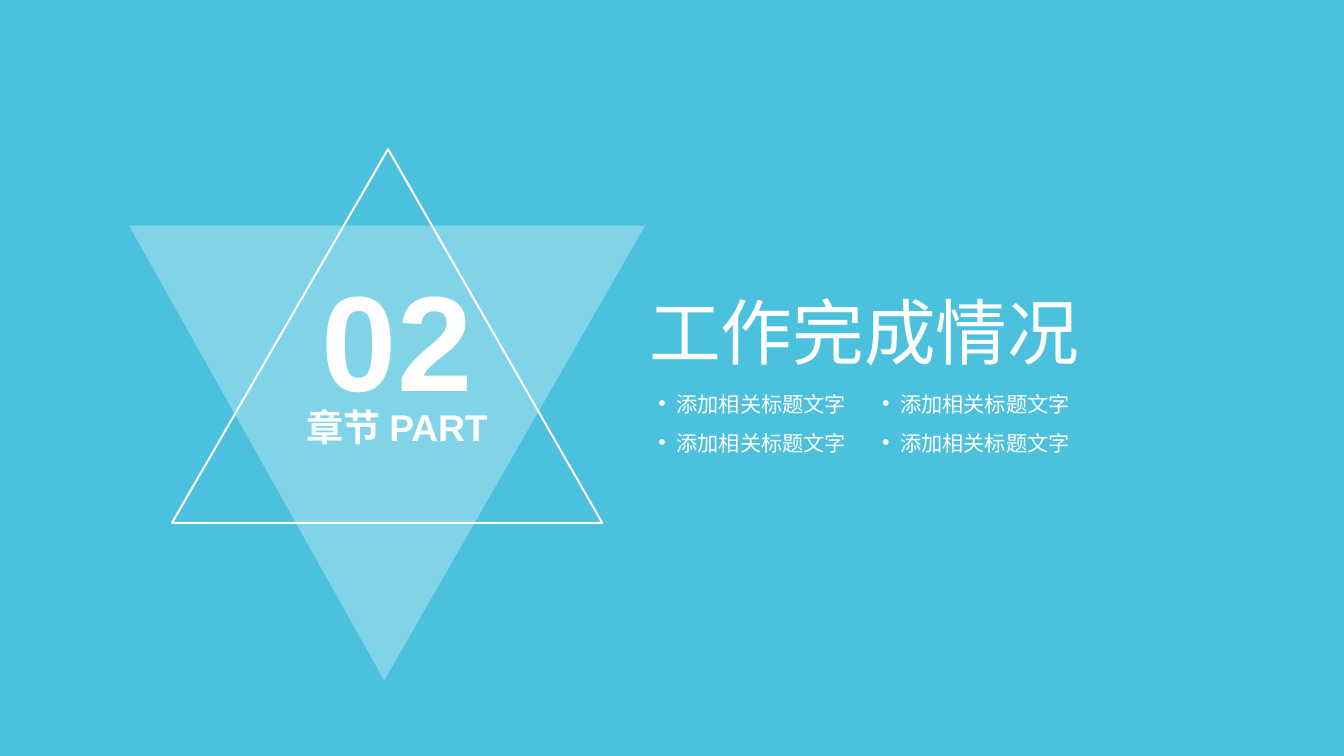
from dataclasses import dataclass
from itertools import product

from lxml.etree import SubElement
from pptx import Presentation
from pptx.dml.color import RGBColor
from pptx.enum.shapes import MSO_SHAPE
from pptx.enum.text import MSO_AUTO_SIZE, PP_ALIGN
from pptx.oxml.ns import qn
from pptx.util import Inches, Pt

WIDTH, HEIGHT = 14.06, 7.91
BLUE, WHITE = "4BC1DD", "FFFFFF"
FONT = "Arial"


@dataclass
class Triangle:
    corners: list[tuple[float, float]]
    opacity: int = 0  # percent of white fill, 0 for outline only
    line_width: float = 0


@dataclass
class Label:
    text: str
    left: float
    top: float
    width: float
    height: float
    size: int
    bold: bool = False
    align: PP_ALIGN = PP_ALIGN.LEFT
    bullet: bool = False


TRIANGLES = [
    Triangle([(1.35, 2.36), (6.75, 2.36), (4.02, 7.12)], opacity=30),
    Triangle([(4.06, 1.56), (6.3, 5.47), (1.8, 5.47)], line_width=1.5),
]

LABELS = [
    Label("02", 3.23, 2.68, 1.85, 1.72, 102, bold=True, align=PP_ALIGN.CENTER),
    Label("章节 PART", 2.26, 4.23, 3.79, 0.47, 28, bold=True, align=PP_ALIGN.CENTER),
    Label("工作完成情况", 6.79, 3.01, 4.89, 0.91, 54),
]

# Bullet grid: two rows by two columns
BULLETS = [
    Label("添加相关标题文字", left, top, 2.19, 0.37, 16, bullet=True)
    for top, left in product((4.04, 4.45), (6.79, 9.13))
]


def color(value: str) -> RGBColor:
    return RGBColor.from_string(value)


def set_attributes(target, values: dict) -> None:
    for name, value in values.items():
        setattr(target, name, value)


def add_background(slide) -> None:
    shape = slide.shapes.add_shape(
        MSO_SHAPE.RECTANGLE, 0, 0, Inches(WIDTH), Inches(HEIGHT))
    shape.shadow.inherit = False
    shape.fill.solid()
    shape.fill.fore_color.rgb = color(BLUE)
    shape.line.fill.background()


def add_triangle(slide, triangle: Triangle) -> None:
    points = [(Inches(x), Inches(y)) for x, y in triangle.corners]
    builder = slide.shapes.build_freeform(*points[0])
    builder.add_line_segments(points[1:], close=True)
    shape = builder.convert_to_shape()
    shape.shadow.inherit = False

    if triangle.opacity:
        shape.fill.solid()
        shape.fill.fore_color.rgb = color(WHITE)
        fill_color = shape.fill._xPr.find(qn("a:solidFill"))[0]
        SubElement(fill_color, qn("a:alpha"), val=str(triangle.opacity * 1000))
    else:
        shape.fill.background()

    if triangle.line_width:
        shape.line.color.rgb = color(WHITE)
        shape.line.width = Pt(triangle.line_width)
    else:
        shape.line.fill.background()


def add_bullet(paragraph) -> None:
    properties = paragraph._p.get_or_add_pPr()
    properties.set("marL", str(Inches(0.19)))
    properties.set("indent", str(-Inches(0.19)))
    SubElement(properties, qn("a:buFont"), typeface=FONT)
    SubElement(properties, qn("a:buChar"), char="•")


def add_label(slide, label: Label) -> None:
    box = slide.shapes.add_textbox(
        Inches(label.left), Inches(label.top), Inches(label.width), Inches(label.height))
    frame = box.text_frame
    set_attributes(frame, {
        "word_wrap": not label.bullet,
        "auto_size": MSO_AUTO_SIZE.SHAPE_TO_FIT_TEXT,
    })
    if not label.bullet:
        set_attributes(frame, dict.fromkeys(
            ("margin_left", "margin_top", "margin_right", "margin_bottom"), 0))

    paragraph = frame.paragraphs[0]
    paragraph.alignment = label.align
    if label.bullet:
        add_bullet(paragraph)
    run = paragraph.add_run()
    run.text = label.text
    set_attributes(run.font, {"name": FONT, "size": Pt(label.size), "bold": label.bold})
    run.font.color.rgb = color(WHITE)


def main() -> None:
    presentation = Presentation()
    set_attributes(presentation, {
        "slide_width": Inches(WIDTH), "slide_height": Inches(HEIGHT)})
    slide = presentation.slides.add_slide(presentation.slide_layouts[6])

    # Backdrop and star of two triangles
    add_background(slide)
    for triangle in TRIANGLES:
        add_triangle(slide, triangle)

    # Chapter number, title and bullets
    for label in LABELS + BULLETS:
        add_label(slide, label)

    presentation.save("out.pptx")


if __name__ == "__main__":
    main()
